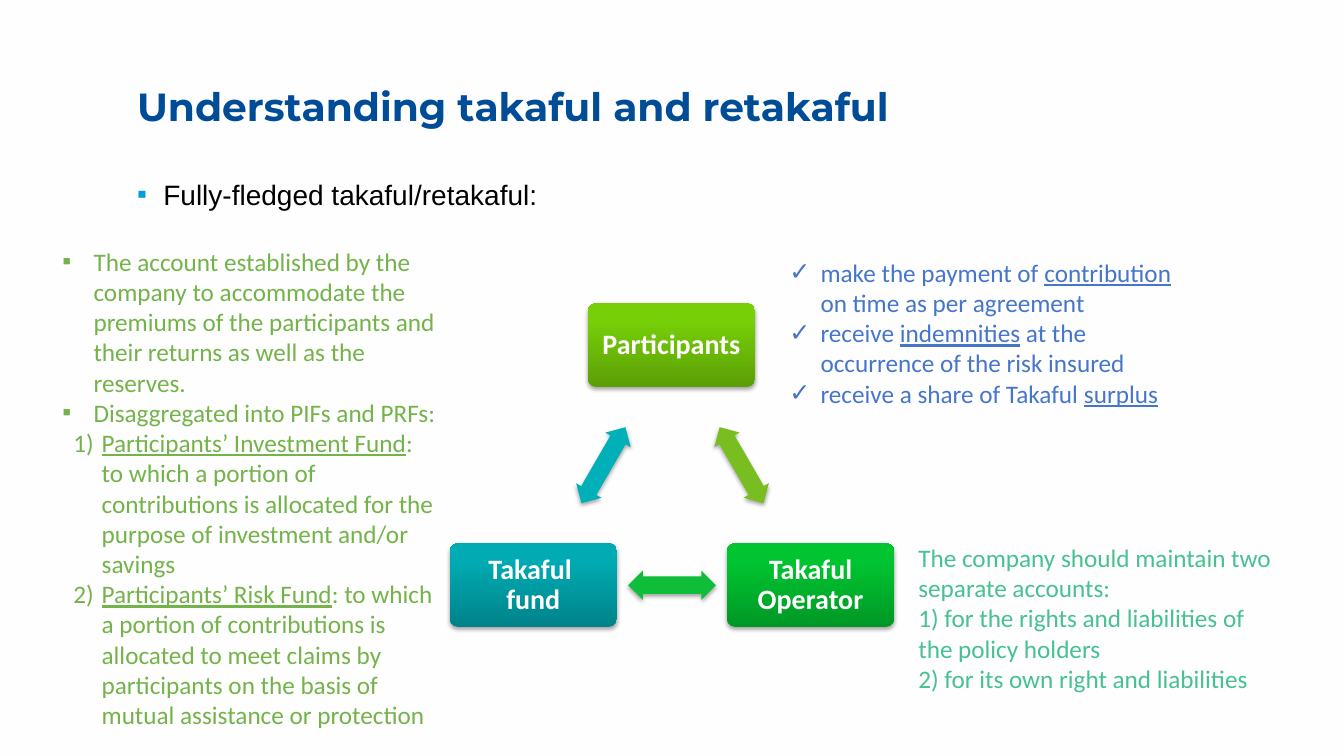
from lxml import etree
from pptx import Presentation
from pptx.dml.color import RGBColor
from pptx.enum.shapes import MSO_SHAPE
from pptx.enum.text import MSO_ANCHOR, PP_ALIGN
from pptx.oxml import parse_xml
from pptx.oxml.ns import nsdecls, qn
from pptx.util import Inches, Pt

COLORS = {
    "background": "FEFEFE", "title": "004C97", "body": "000000", "bullet": "009CDE",
    "fund_text": "74B34A", "participant_text": "4676CB", "operator_text": "46C191",
    "participants": ("5C9F06", "77CF08"), "operator": ("009825", "00C530"),
    "fund": ("00838A", "00ABB3"),
    "arrow_right": "78BE20", "arrow_bottom": "0FBD39", "arrow_left": "00B0B9",
}


def write(tf, text, size=18, font="Calibri", color="body", bold=False, align=None,
          spacing=None, before=None, bullet=None, bullet_color=None, indent=0, hang=0,
          first=True):
    """Write one paragraph; _underscores_ mark underlined words, a newline a line break."""
    p = tf.paragraphs[0] if first else tf.add_paragraph()
    p.alignment, p.line_spacing, p.space_before = align, spacing, before
    if bullet:
        pPr = p._p.get_or_add_pPr()
        pPr.set("marL", str(Inches(indent)))
        pPr.set("indent", str(-Inches(hang)))
        if bullet_color:
            clr = etree.SubElement(pPr, qn("a:buClr"))
            etree.SubElement(clr, qn("a:srgbClr"), val=COLORS[bullet_color])
        if bullet == "number":
            etree.SubElement(pPr, qn("a:buAutoNum"), type="arabicParenR")
        else:
            etree.SubElement(pPr, qn("a:buFont"), typeface="Arial")
            etree.SubElement(pPr, qn("a:buChar"), char=bullet)
    for i, part in enumerate(text.split("_")):
        for j, line in enumerate(part.split("\n")):
            if j:
                p.add_line_break()
            if line:
                r = p.add_run()
                r.text = line
                r.font.size, r.font.name, r.font.bold = Pt(size), font, bold
                r.font.underline = True if i % 2 else None
                r.font.color.rgb = RGBColor.from_string(COLORS[color])


def add_box(kind, left, top, width, height):
    """Add a text box (kind None) or a softly shadowed shape without outline."""
    at = [Inches(v) for v in (left, top, width, height)]
    if kind is None:
        sp = s.shapes.add_textbox(*at)
    else:
        sp = s.shapes.add_shape(kind, *at)
        sp.line.fill.background()
        sp.shadow.inherit = False
        sp._element.spPr.find(qn("a:effectLst")).append(parse_xml(
            f'<a:outerShdw {nsdecls("a")} blurRad="{Pt(3.1)}" dist="{Pt(1.8)}" dir="5400000" '
            'rotWithShape="0"><a:srgbClr val="000000"><a:alpha val="35000"/></a:srgbClr>'
            '</a:outerShdw>'))
    sp.text_frame.word_wrap = True
    return sp


prs = Presentation()
prs.slide_width, prs.slide_height = Inches(13.33), Inches(7.5)
s = prs.slides.add_slide(prs.slide_layouts[6])
s.background.fill.solid()
s.background.fill.fore_color.rgb = RGBColor.from_string(COLORS["background"])

# Title and lead line
tf = add_box(None, 1.36, 0.54, 10.62, 1.07).text_frame
tf.margin_left = tf.margin_right = tf.margin_top = tf.margin_bottom = 0
tf.vertical_anchor = MSO_ANCHOR.MIDDLE
write(tf, "Understanding takaful and retakaful", size=28, font="Montserrat",
      color="title", bold=True, spacing=0.9)

tf = add_box(None, 1.36, 1.61, 10.62, 0.68).text_frame
tf.margin_left = tf.margin_right = tf.margin_bottom = 0
tf.margin_top = Inches(0.15)
write(tf, "Fully-fledged takaful/retakaful:", size=20, font="Arial", before=Pt(6),
      bullet="▪", bullet_color="bullet", indent=0.26, hang=0.26)

# Triangle of parties
NODE_W, NODE_H = 1.66, 0.83
for text, key, left, top in [
    ("Participants", "participants", 5.83, 3.01),
    ("Takaful Operator", "operator", 7.21, 5.39),
    ("Takaful \nfund", "fund", 4.46, 5.39),
]:
    sp = add_box(MSO_SHAPE.ROUNDED_RECTANGLE, left, top, NODE_W, NODE_H)
    sp.adjustments[0] = 0.1
    sp.fill.gradient()
    sp.fill.gradient_angle = 90
    for stop, position, color in zip(sp.fill.gradient_stops, (0, 0.8), COLORS[key]):
        stop.position = position
        stop.color.rgb = RGBColor.from_string(color)
    tf = sp.text_frame
    tf.margin_left = tf.margin_right = tf.margin_top = tf.margin_bottom = Inches(0.1)
    tf.vertical_anchor = MSO_ANCHOR.MIDDLE
    write(tf, text, size=20, color="background", bold=True, align=PP_ALIGN.CENTER,
          spacing=0.9)

# Double arrows between the parties
for key, left, top, angle in [
    ("arrow_right", 6.92, 4.47, 60),
    ("arrow_bottom", 6.23, 5.66, 180),
    ("arrow_left", 5.55, 4.47, 300),
]:
    sp = add_box(MSO_SHAPE.LEFT_RIGHT_ARROW, left, top, 0.87, 0.29)
    sp.adjustments[0], sp.adjustments[1] = 0.6, 0.5
    sp.rotation = angle
    sp.fill.solid()
    sp.fill.fore_color.rgb = RGBColor.from_string(COLORS[key])

# Notes beside each party
check = dict(bullet="✓", indent=0.31, hang=0.31)
square = dict(bullet="▪", indent=0.31, hang=0.31)
number = dict(bullet="number", indent=0.39, hang=0.28)
for place, color, paragraphs in [
    ((9.01, 5.33, 3.82, 1.62), "operator_text", [
        ("The company should maintain two separate accounts:", {}),
        ("1) for the rights and liabilities of the policy holders", {}),
        ("2) for its own right and liabilities", {}),
    ]),
    ((7.73, 2.5, 4.12, 1.62), "participant_text", [
        ("make the payment of _contribution_ on time as per agreement", check),
        ("receive _indemnities_ at the occurrence of the risk insured", check),
        ("receive a share of Takaful _surplus_", check),
    ]),
    ((0.52, 2.39, 3.94, 4.95), "fund_text", [
        ("The account established by the company to accommodate the premiums of the "
         "participants and their returns as well as the reserves.", square),
        ("Disaggregated into PIFs and PRFs:", square),
        ("_Participants’ Investment Fund_: to which a portion of contributions is "
         "allocated for the purpose of investment and/or savings", number),
        ("_Participants’ Risk Fund_: to which a portion of contributions is allocated to "
         "meet claims by participants on the basis of mutual assistance or protection",
         number),
    ]),
]:
    tf = add_box(None, *place).text_frame
    for i, (text, style) in enumerate(paragraphs):
        write(tf, text, color=color, first=i == 0, **style)

prs.save("out.pptx")
